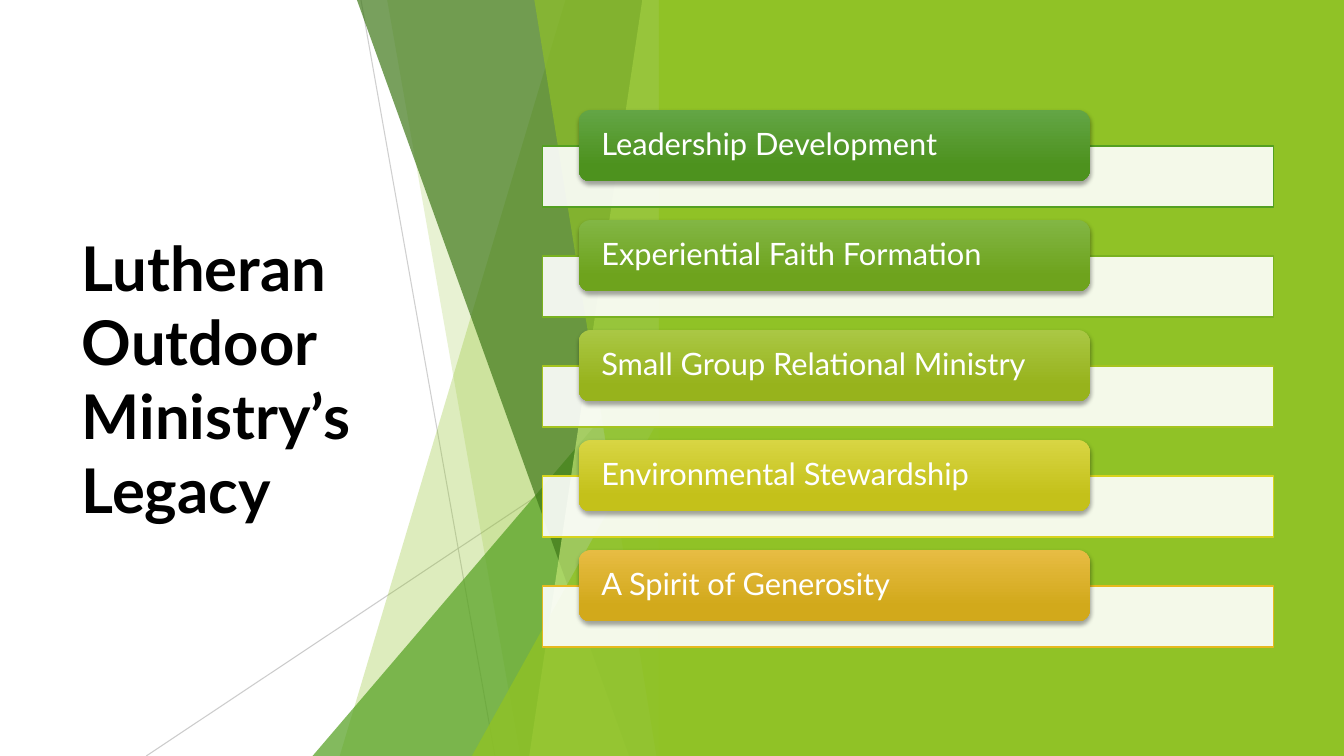
import pptx
import pptx.dml.color
import pptx.enum.shapes
import pptx.enum.text
import pptx.oxml
import pptx.oxml.ns
import pptx.util
import lxml.etree

SHAPE = pptx.enum.shapes.MSO_SHAPE
ANCHOR = pptx.enum.text.MSO_ANCHOR
LEFT = pptx.enum.text.PP_ALIGN.LEFT
qn = pptx.oxml.ns.qn

GREEN, LEAF, DARK, LIME = "90C226", "54A021", "3F7819", "C0E474"
WHITE, BLACK, GREY = "FFFFFF", "000000", "BFBFBF"


def rgb(code):
    return pptx.dml.color.RGBColor.from_string(code)


class Deck:
    """Style and current slide; lengths are percent of the slide's size."""
    font = "Lato"

    def __init__(self):
        self.show = pptx.Presentation()
        self.show.slide_width = pptx.util.Inches(13.333)
        self.show.slide_height = pptx.util.Inches(7.5)
        self.slide = self.show.slides.add_slide(self.show.slide_layouts[5])

    def x(self, share):
        return int(self.show.slide_width * share / 100)

    def y(self, share):
        return int(self.show.slide_height * share / 100)

    def box(self, left, top, width, height):
        return self.x(left), self.y(top), self.x(width), self.y(height)

    def paint(self, fill, color, opacity=100):
        fill.solid()
        fill.fore_color.rgb = rgb(color)
        if opacity < 100:
            tint = fill._xPr.find(qn("a:solidFill"))[0]
            lxml.etree.SubElement(tint, qn("a:alpha"), val=str(opacity * 1000))

    def add_words(self, frame, text, size, color, bold=False):
        frame.word_wrap = True
        frame.vertical_anchor = ANCHOR.MIDDLE
        paragraph = frame.paragraphs[0]
        paragraph.alignment = LEFT
        run = paragraph.add_run()
        run.text = text
        run.font.name = self.font
        run.font.size = pptx.util.Pt(size)
        run.font.bold = bold
        run.font.color.rgb = rgb(color)
        return paragraph

    def title(self, text, area):
        heading = self.slide.shapes.title
        heading.left, heading.top, heading.width, heading.height = self.box(*area)
        heading.text_frame.auto_size = pptx.enum.text.MSO_AUTO_SIZE.NONE
        self.add_words(heading.text_frame, text, 44, BLACK, bold=True)

    def line(self, start, end, opacity):
        ray = self.slide.shapes.add_connector(
            pptx.enum.shapes.MSO_CONNECTOR.STRAIGHT,
            self.x(start[0]), self.y(start[1]), self.x(end[0]), self.y(end[1]))
        ray.line.width = pptx.util.Pt(0.75)
        self.paint(ray.line.fill, GREY, opacity)
        lxml.etree.SubElement(ray._element.spPr, qn("a:effectLst"))

    def facet(self, top_left, bottom_left, right, color, opacity):
        outline = self.slide.shapes.build_freeform(self.x(top_left), 0)
        outline.add_line_segments([
            (self.x(right), 0), (self.x(right), self.y(100)),
            (self.x(bottom_left), self.y(100))])
        self.finish(outline.convert_to_shape(), color, opacity)

    def shape(self, kind, area, color, opacity=100, border=None):
        item = self.slide.shapes.add_shape(kind, *self.box(*area))
        self.finish(item, color, opacity, border)
        return item

    def triangle(self, left, top, right, color, opacity):
        area = (left, top, right - left, 100 - top)
        wedge = self.shape(SHAPE.ISOSCELES_TRIANGLE, area, color, opacity)
        wedge.adjustments[0] = 1

    def finish(self, item, color, opacity, border=None):
        item.shadow.inherit = False
        self.paint(item.fill, color, opacity)
        if border:
            item.line.width = pptx.util.Pt(1)
            self.paint(item.line.fill, border)
        else:
            item.line.fill.background()

    def label(self, text, area, light, deep):
        tab = self.shape(SHAPE.ROUNDED_RECTANGLE, area, deep)
        tab.fill.gradient()
        tab.fill.gradient_angle = 270
        for stop, position, color in zip(tab.fill.gradient_stops, (0, 0.78), (light, deep)):
            stop.position = position
            stop.color.rgb = rgb(color)
        self.drop_shadow(tab)
        frame = tab.text_frame
        frame.margin_left = frame.margin_right = self.x(1.43)
        frame.margin_top = frame.margin_bottom = 0
        self.add_words(frame, text, 22, WHITE).line_spacing = 0.9

    def drop_shadow(self, item):
        effects = item._element.spPr.find(qn("a:effectLst"))
        shade = lxml.etree.SubElement(
            effects, qn("a:outerShdw"), blurRad=str(int(pptx.util.Pt(3))),
            dist=str(int(pptx.util.Pt(2))), dir="5400000", algn="ctr", rotWithShape="0")
        tint = lxml.etree.SubElement(shade, qn("a:srgbClr"), val=BLACK)
        lxml.etree.SubElement(tint, qn("a:alpha"), val="35000")


def main():
    deck = Deck()
    deck.title("Lutheran Outdoor Ministry’s Legacy", (5.33, 20.13, 29.1, 59.73))

    # Faceted divider, back to front
    middle = 50
    deck.line((26.86, 0), (36.83, 100), 75)
    deck.line((middle, 53.73), (10.88, 100), 80)
    deck.facet(42.08, 25.28, middle, GREEN, 30)
    deck.facet(28.81, 38.71, middle, GREEN, 20)
    deck.triangle(23.26, 44.4, middle, LEAF, 72)
    deck.facet(26.56, 46.81, middle, DARK, 70)
    deck.facet(47.79, 39.38, middle, LIME, 70)
    deck.facet(39.76, 48.84, middle, GREEN, 65)
    deck.triangle(35.11, 52.4, middle, GREEN, 80)

    # Green panel
    deck.shape(SHAPE.RECTANGLE, (49.03, 0, 50.97, 100), GREEN)

    # Legacy list: text, bar border, tab gradient
    legacies = [
        ("Leadership Development", LEAF, "63A545", "4D921E"),
        ("Experiential Faith Formation", "79B220", "82B644", "6EA31D"),
        ("Small Group Relational Ministry", "A5C41F", "AAC744", "97B31C"),
        ("Environmental Stewardship", "D7D31D", "D8D543", "C4C11A"),
        ("A Spirit of Generosity", "E6B91E", "E7BC43", "D2A91B"),
    ]
    pitch = 14.55
    for row, (text, border, light, deep) in enumerate(legacies, start=1):
        top = row * pitch
        deck.shape(SHAPE.RECTANGLE, (40.36, top + 4.78, 54.39, 8.07), WHITE, 90, border)
        deck.label(text, (43.06, top, 38.03, 9.45), light, deep)

    deck.show.save("out.pptx")


if __name__ == "__main__":
    main()
